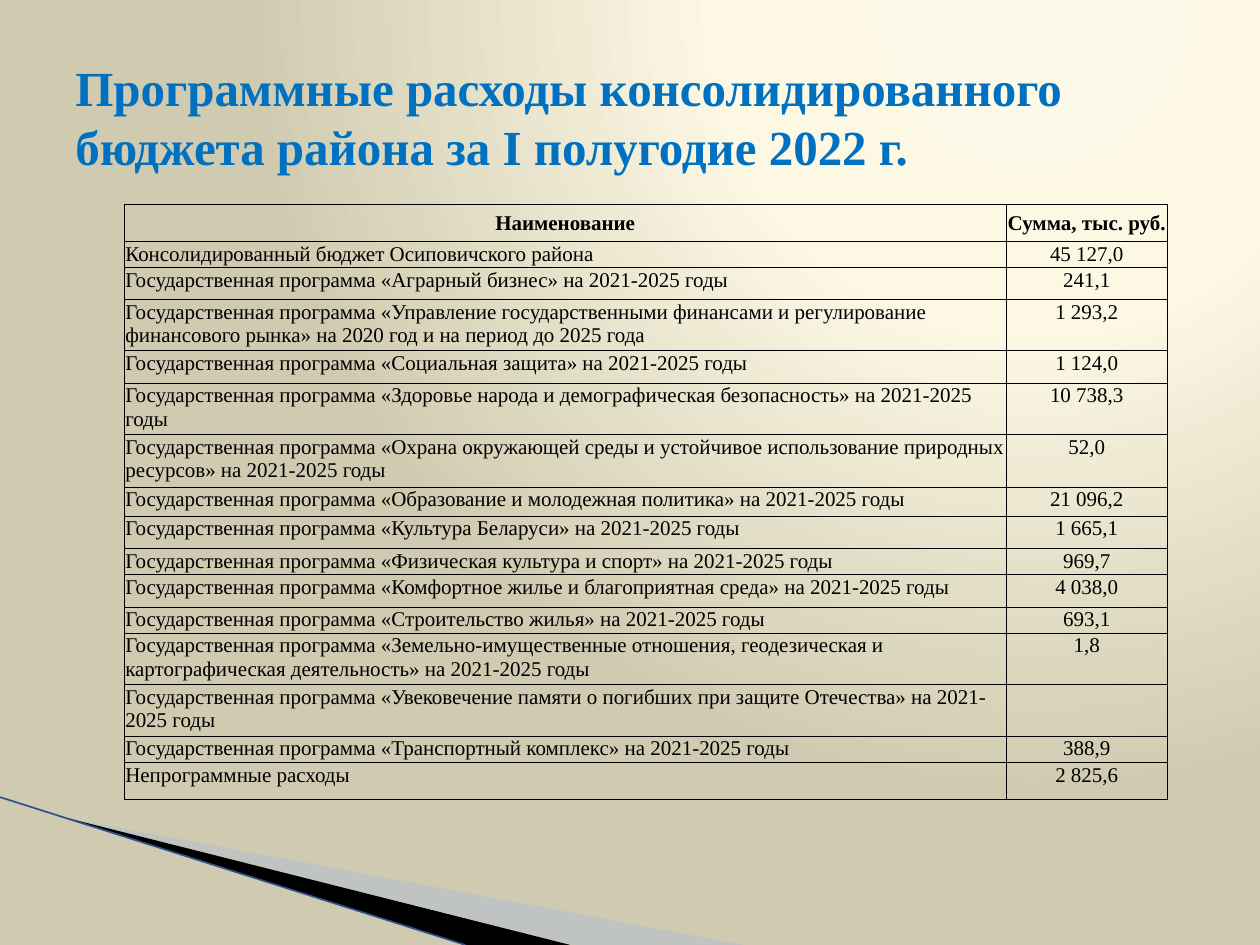
from lxml import etree
from pptx import Presentation
from pptx.dml.color import RGBColor
from pptx.enum import text
from pptx.oxml import ns, parse_xml
from pptx.util import Pt

COLORS = {
    "title": "0070C0", "ink": "000000", "band": "A7B9DB", "edge": "2F528F",
    "glow": "FDF9E8", "cream": "FCF8E4", "sand": "D0CBB0",
}
FONT = "Times New Roman"
COLUMN_WIDTHS = (504, 92)
HEADER = ("Наименование", "Сумма, тыс. руб.", 21)
# name, amount, row height
EXPENSES = [
    ("Консолидированный бюджет Осиповичского района", "45 127,0", 15),
    ("Государственная программа «Аграрный бизнес» на 2021-2025 годы", "241,1", 18),
    ("Государственная программа «Управление государственными финансами и регулирование "
     "финансового рынка» на 2020 год и на период до 2025 года", "1 293,2", 28.5),
    ("Государственная программа «Социальная защита» на 2021-2025 годы", "1 124,0", 18.5),
    ("Государственная программа «Здоровье народа и демографическая безопасность» "
     "на 2021-2025 годы", "10 738,3", 27.5),
    ("Государственная программа «Охрана окружающей среды и устойчивое использование "
     "природных ресурсов» на 2021-2025 годы", "52,0", 30),
    ("Государственная программа «Образование и молодежная политика» на 2021-2025 годы",
     "21 096,2", 16.5),
    ("Государственная программа «Культура Беларуси» на 2021-2025 годы", "1 665,1", 18.5),
    ("Государственная программа «Физическая культура и спорт» на 2021-2025 годы",
     "969,7", 15),
    ("Государственная программа «Комфортное жилье и благоприятная среда» "
     "на 2021-2025 годы", "4 038,0", 18.5),
    ("Государственная программа «Строительство жилья» на 2021-2025 годы", "693,1", 15),
    ("Государственная программа «Земельно-имущественные отношения, геодезическая и "
     "картографическая деятельность» на 2021-2025 годы", "1,8", 28.5),
    ("Государственная программа «Увековечение памяти о погибших при защите Отечества» "
     "на 2021-2025 годы", "", 29),
    ("Государственная программа «Транспортный комплекс» на 2021-2025 годы", "388,9", 14.5),
    ("Непрограммные расходы", "2 825,6", 21),
]


def rgb(name):
    return RGBColor.from_string(COLORS[name])


def add_run(paragraph, words, size, color, bold):
    run = paragraph.add_run()
    run.text = words
    run.font.name = FONT
    run.font.size = Pt(size)
    run.font.bold = bold
    run.font.color.rgb = rgb(color)


def paint_background(slide):
    """Radial glow centred near the top right."""
    fill = slide.background.fill
    fill.solid()
    stops = "".join(
        f'<a:gs pos="{position}"><a:srgbClr val="{COLORS[name]}"/></a:gs>'
        for position, name in ((0, "glow"), (40000, "cream"), (100000, "sand")))
    gradient = parse_xml(
        f'<a:gradFill {ns.nsdecls("a")} rotWithShape="1"><a:gsLst>{stops}</a:gsLst>'
        '<a:path path="circle"><a:fillToRect l="65000" t="0" r="0" b="98000"/></a:path>'
        '</a:gradFill>')
    solid = slide.background._cSld.find(".//" + ns.qn("a:solidFill"))
    solid.getparent().replace(solid, gradient)


def add_wedge(slide, corners, color, opacity=100):
    builder = slide.shapes.build_freeform(*map(Pt, corners[0]))
    builder.add_line_segments([(Pt(x), Pt(y)) for x, y in corners[1:]])
    wedge = builder.convert_to_shape()
    wedge.shadow.inherit = False
    wedge.line.fill.background()
    wedge.fill.solid()
    wedge.fill.fore_color.rgb = rgb(color)
    if opacity < 100:
        paint = wedge.fill._xPr.find(".//" + ns.qn("a:srgbClr"))
        etree.SubElement(paint, ns.qn("a:alpha"), val=str(opacity * 1000))


def add_corner_decor(slide, left, top, bottom):
    tip = (left + 38.5, top + 12)
    add_wedge(slide, [tip, (left + 425, bottom), (left + 328, bottom)], "band", 40)
    add_wedge(slide, [tip, (left + 326, bottom), (left + 266, bottom)], "ink")
    edge = slide.shapes.add_connector(
        1, Pt(left), Pt(top), Pt(left + 266), Pt(bottom))
    edge.line.color.rgb = rgb("edge")
    edge.line.width = Pt(0.95)
    etree.SubElement(edge._element.spPr, ns.qn("a:effectLst"))


def add_title(slide, left, top, width, height):
    frame = slide.shapes.add_textbox(Pt(left), Pt(top), Pt(width), Pt(height)).text_frame
    frame.word_wrap = True
    frame.vertical_anchor = text.MSO_ANCHOR.MIDDLE
    add_run(frame.paragraphs[0],
            "Программные расходы консолидированного бюджета района за I полугодие 2022 г.",
            28, "title", True)


def outline_cell(cell):
    properties = cell._tc.get_or_add_tcPr()
    for index, side in enumerate(("lnL", "lnR", "lnT", "lnB")):
        properties.insert(index, parse_xml(
            f'<a:{side} {ns.nsdecls("a")} w="{Pt(0.5)}"><a:solidFill>'
            f'<a:srgbClr val="{COLORS["ink"]}"/></a:solidFill></a:{side}>'))


def fill_cell(cell, words, centered, heading):
    cell.fill.background()
    outline_cell(cell)
    cell.margin_left = cell.margin_right = cell.margin_top = Pt(0.6)
    cell.margin_bottom = 0
    cell.vertical_anchor = text.MSO_ANCHOR.MIDDLE if heading else text.MSO_ANCHOR.TOP
    paragraph = cell.text_frame.paragraphs[0]
    paragraph.alignment = text.PP_ALIGN.CENTER if centered else text.PP_ALIGN.LEFT
    if words:
        add_run(paragraph, words, 12, "ink", heading)


def add_expense_table(slide, left, top):
    rows = [HEADER, *EXPENSES]
    table = slide.shapes.add_table(
        len(rows), len(COLUMN_WIDTHS), Pt(left), Pt(top),
        Pt(sum(COLUMN_WIDTHS)), Pt(sum(row[-1] for row in rows))).table
    table.first_row = table.horz_banding = False
    for column, width in zip(table.columns, COLUMN_WIDTHS):
        column.width = Pt(width)
    for r, (name, amount, height) in enumerate(rows):
        table.rows[r].height = Pt(height)
        heading = r == 0
        fill_cell(table.cell(r, 0), name, heading, heading)
        fill_cell(table.cell(r, 1), amount, True, heading)


def main():
    deck = Presentation()
    deck.slide_width, deck.slide_height = Pt(720), Pt(540)
    slide = deck.slides.add_slide(deck.slide_layouts[6])
    paint_background(slide)
    add_corner_decor(slide, 0, 455.5, 540)
    add_title(slide, 36, 21.6, 648, 90)
    add_expense_table(slide, 71, 117)
    deck.save("out.pptx")


if __name__ == "__main__":
    main()
